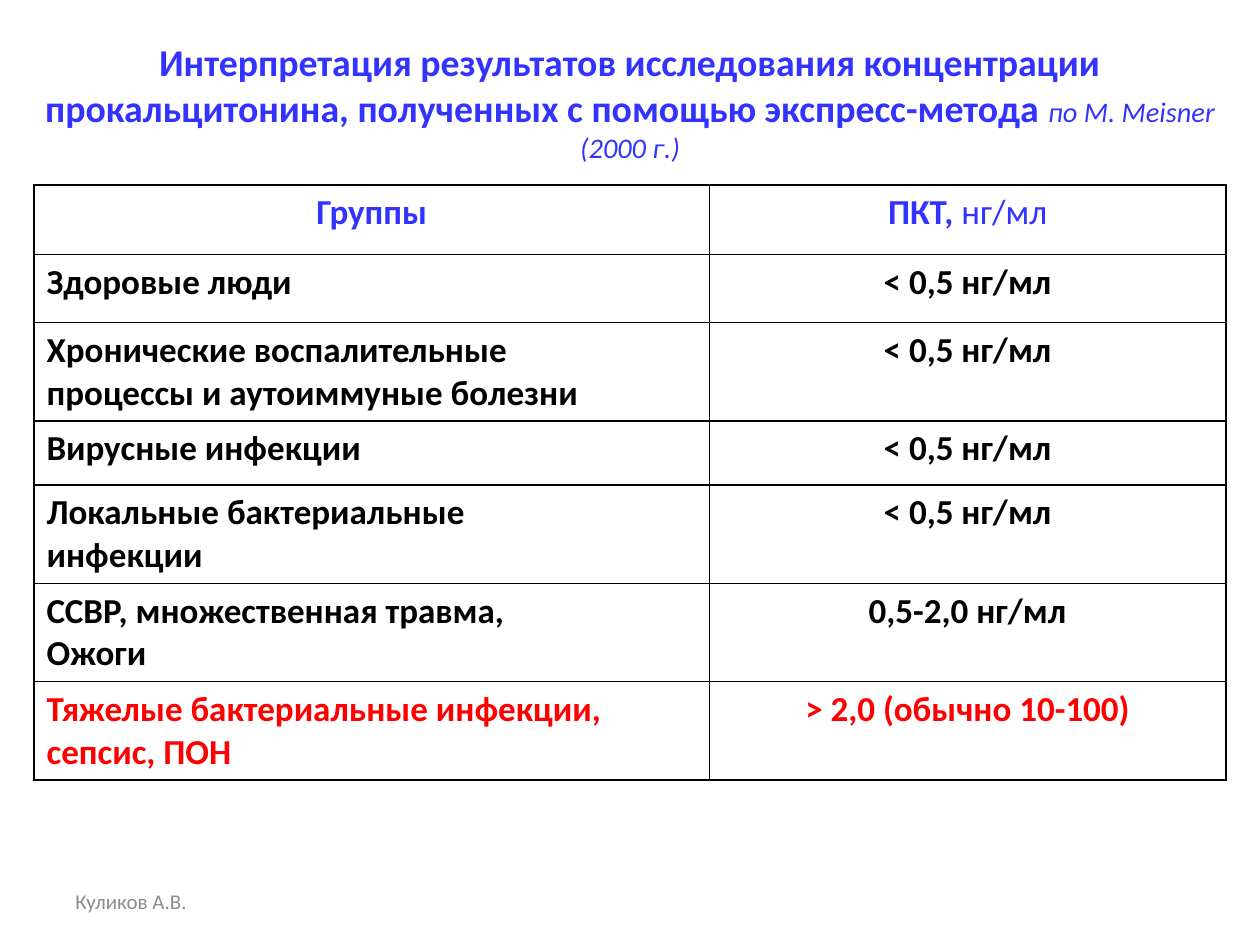
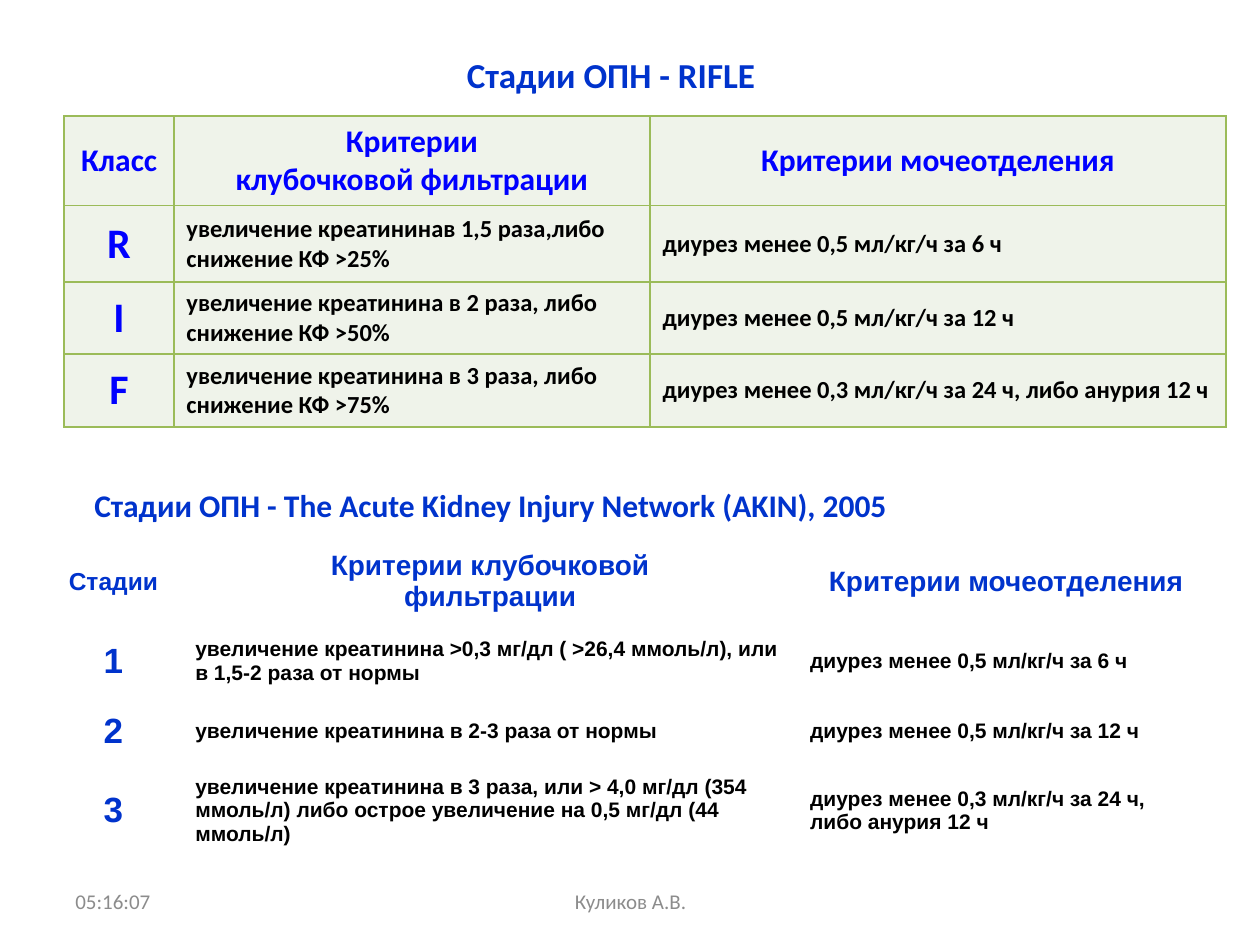
"""Build two slides of clinical criteria tables: procalcitonin levels and kidney injury stages."""
from dataclasses import dataclass

from lxml.etree import SubElement
from pptx import Presentation
from pptx.dml.color import RGBColor
from pptx.enum.text import MSO_ANCHOR, PP_ALIGN
from pptx.oxml.ns import qn
from pptx.util import Emu, Pt


@dataclass(frozen=True)
class Theme:
    font: str = "Calibri"
    plain: str = "Arial"
    black: str = "000000"
    red: str = "FF0000"
    violet: str = "3333FF"
    blue: str = "0033CC"
    bright: str = "0000FF"
    green: str = "9BBB59"
    pale: str = "EFF3EA"
    grey: str = "8C8C8C"
    lead: float = 21.6
    source: float = 16.2
    large: int = 24
    title: int = 20
    head: int = 18
    sub: int = 16
    body: int = 14
    small: int = 12


THEME = Theme()
UNIT = 9144
LEFT, CENTER = PP_ALIGN.LEFT, PP_ALIGN.CENTER
TOP, MIDDLE, BOTTOM = MSO_ANCHOR.TOP, MSO_ANCHOR.MIDDLE, MSO_ANCHOR.BOTTOM


def px(count):
    """Turn whole px into EMU."""
    return Emu(count * UNIT)


def write(frame, text, tail="", size=THEME.title, color=THEME.black, font=THEME.font,
          bold=True, align=LEFT, tail_size=None):
    """Fill a text frame, one paragraph a line, with an optional lighter tail."""
    frame.word_wrap = True
    for index, line in enumerate(text.split("\n")):
        para = frame.add_paragraph() if index else frame.paragraphs[0]
        para.alignment = align
        pieces = [(line, size, bold, False)]
        if tail:
            pieces.append((tail, tail_size or size, False, bool(tail_size)))
        for words, points, heavy, slant in pieces:
            run = para.add_run()
            run.text = words
            run.font.name = font
            run.font.size = Pt(points)
            run.font.bold = heavy
            run.font.italic = slant
            run.font.color.rgb = RGBColor.from_string(color)


def label(slide, box, text, anchor=MIDDLE, **style):
    """Place a text box."""
    frame = slide.shapes.add_textbox(*map(px, box)).text_frame
    frame.vertical_anchor = anchor
    write(frame, text, **style)


def footer(slide, box, text, align=LEFT):
    """Place a grey footer note."""
    label(slide, box, text, size=THEME.small, color=THEME.grey, bold=False, align=align)


def border(cell, color):
    """Draw all four edges of a cell, or clear them."""
    props = cell._tc.get_or_add_tcPr()
    for side in ("lnL", "lnR", "lnT", "lnB"):
        line = SubElement(props, qn(f"a:{side}"), w=str(Pt(1)))
        if color:
            paint = SubElement(line, qn("a:solidFill"))
            SubElement(paint, qn("a:srgbClr"), val=color)
        else:
            SubElement(line, qn("a:noFill"))


def table(slide, spot, cols, rows, data, style, anchor=MIDDLE, edge=None, fill=None):
    """Place a table whose cell formats come from style(row, col)."""
    box = (*spot, sum(cols), sum(rows))
    grid = slide.shapes.add_table(len(rows), len(cols), *map(px, box)).table
    grid.first_row = grid.horz_banding = False
    for col, width in zip(grid.columns, cols):
        col.width = px(width)
    for row, height in zip(grid.rows, rows):
        row.height = px(height)
    for r, texts in enumerate(data):
        for c, text in enumerate(texts):
            cell = grid.cell(r, c)
            cell.vertical_anchor = anchor
            border(cell, edge)
            if fill:
                cell.fill.solid()
                cell.fill.fore_color.rgb = RGBColor.from_string(fill)
            else:
                cell.fill.background()
            write(cell.text_frame, text, **style(r, c))


def level_style(r, c):
    """Format the procalcitonin table."""
    color = {0: THEME.violet, 6: THEME.red}.get(r, THEME.black)
    tail = "нг/мл" if (r, c) == (0, 1) else ""
    return dict(color=color, tail=tail, align=CENTER if c or not r else LEFT)


def stage_style(heads, mark, body, color, font):
    """Make the cell format rule of a stage table."""
    def style(r, c):
        """Format one cell by its place."""
        if r and c:
            return dict(size=body, font=font)
        size = mark if r else heads[c]
        return dict(size=size, color=color, font=font, align=CENTER)
    return style


def level_slide(slide):
    """Build the procalcitonin slide."""
    footer(slide, (50, 695, 233, 40), "Куликов А.В.")
    label(slide, (0, 30, 1000, 101),
          "Интерпретация результатов исследования концентрации "
          "прокальцитонина, полученных с помощью экспресс-метода ",
          tail="по M. Meisner (2000 г.)", size=THEME.lead, tail_size=THEME.source,
          color=THEME.violet, align=CENTER)
    normal = "< 0,5 нг/мл"
    data = [
        ("Группы", "ПКТ, "),
        ("Здоровые люди", normal),
        ("Хронические воспалительные\nпроцессы и аутоиммуные болезни", normal),
        ("Вирусные инфекции", normal),
        ("Локальные бактериальные\nинфекции", normal),
        ("ССВР, множественная травма,\nОжоги", "0,5-2,0 нг/мл"),
        ("Тяжелые бактериальные инфекции,\nсепсис, ПОН", "> 2,0 (обычно 10-100)"),
    ]
    table(slide, (27, 147), (536, 410), (55, 54, 78, 51, 78, 78, 78), data,
          level_style, anchor=TOP, edge=THEME.black)


def stage_slide(slide):
    """Build the kidney injury slide."""
    label(slide, (35, 29, 900, 61), "Стадии ОПН - RIFLE", color=THEME.blue, align=CENTER)
    output = "Критерии мочеотделения"
    rifle = [
        ("Класс", "Критерии\nклубочковой фильтрации", output),
        ("R", "увеличение креатининав 1,5 раза,либо снижение КФ >25%",
         "диурез менее 0,5 мл/кг/ч за 6 ч"),
        ("I", "увеличение креатинина в 2 раза, либо снижение КФ >50%",
         "диурез менее 0,5 мл/кг/ч за 12 ч"),
        ("F", "увеличение креатинина в 3 раза, либо снижение КФ >75%",
         "диурез менее 0,3 мл/кг/ч за 24 ч, либо анурия 12 ч"),
    ]
    table(slide, (51, 92), (87, 378, 457), (71, 61, 57, 58), rifle,
          stage_style([THEME.head] * 3, THEME.large, THEME.body, THEME.bright, THEME.font),
          edge=THEME.green, fill=THEME.pale)
    footer(slide, (50, 695, 233, 40), "05:16:07")
    footer(slide, (342, 695, 317, 40), "Куликов А.В.", align=CENTER)
    akin = [
        ("Стадии", "Критерии клубочковой\nфильтрации", output),
        ("1", "увеличение креатинина >0,3 мг/дл ( >26,4 ммоль/л), или в 1,5-2 раза от нормы",
         "диурез менее 0,5 мл/кг/ч за 6 ч"),
        ("2", "увеличение креатинина в 2-3 раза от нормы",
         "диурез менее 0,5 мл/кг/ч за 12 ч"),
        ("3", "увеличение креатинина в 3 раза, или > 4,0 мг/дл (354\n"
              "ммоль/л) либо острое увеличение на 0,5 мг/дл (44 ммоль/л)",
         "диурез менее 0,3 мл/кг/ч за 24 ч, либо анурия 12 ч"),
    ]
    table(slide, (35, 430), (110, 488, 331), (59, 63, 48, 78), akin,
          stage_style((THEME.body, THEME.sub, THEME.sub), THEME.title, THEME.small,
                      THEME.blue, THEME.plain))
    label(slide, (65, 362, 866, 59), "Стадии ОПН - The Acute Kidney Injury Network (AKIN), 2005",
          anchor=BOTTOM, size=THEME.head, color=THEME.blue)


def main():
    """Build and save the deck."""
    deck = Presentation()
    deck.slide_width, deck.slide_height = px(1000), px(750)
    for build in (level_slide, stage_slide):
        build(deck.slides.add_slide(deck.slide_layouts[6]))
    deck.save("out.pptx")


if __name__ == "__main__":
    main()
